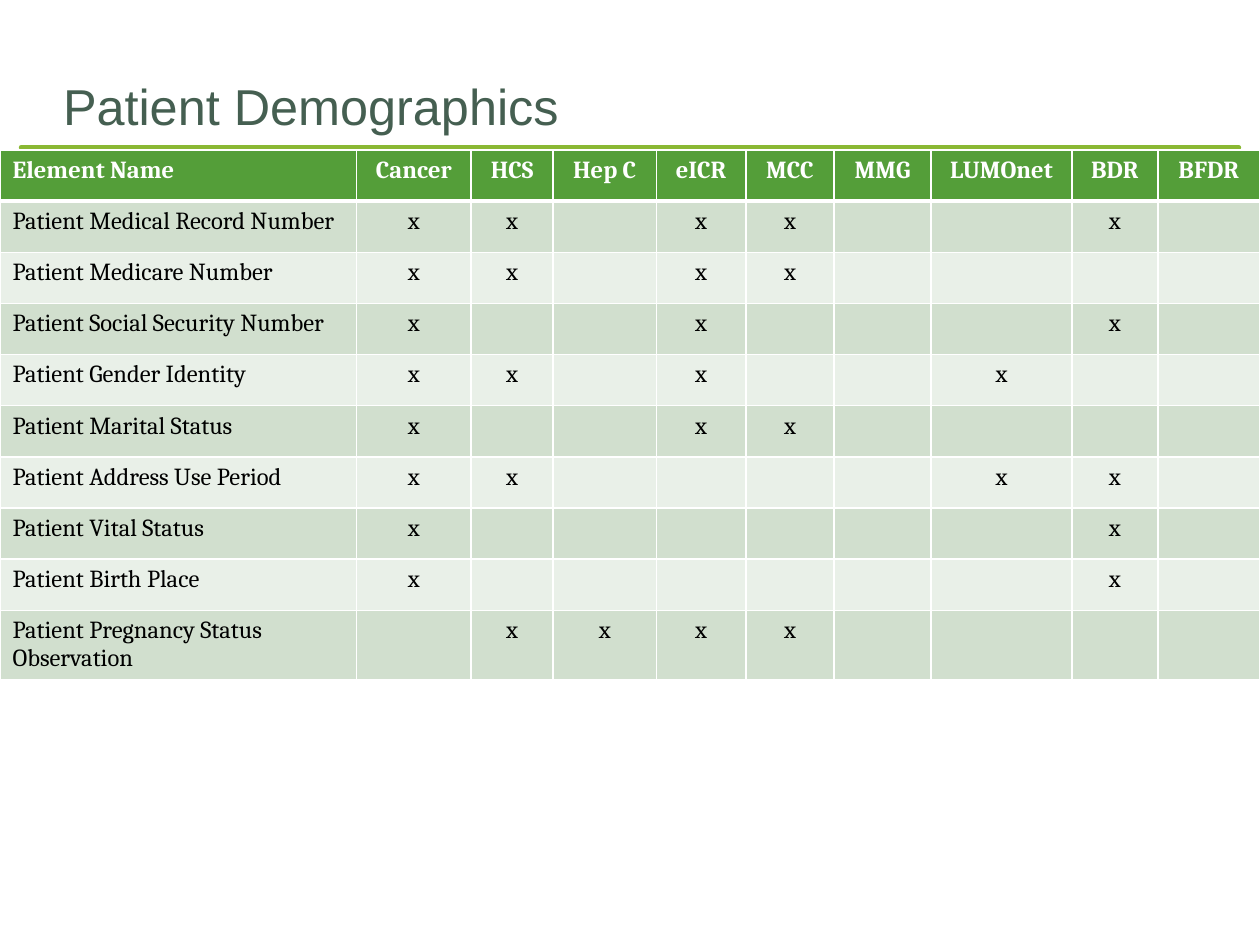
from lxml import etree
from pptx import Presentation
from pptx.dml.color import RGBColor
from pptx.enum.shapes import MSO_CONNECTOR as Conn
from pptx.enum.text import MSO_ANCHOR as Anchor, MSO_AUTO_SIZE as Fit, PP_ALIGN as Align
from pptx.oxml import parse_xml
from pptx.oxml.ns import nsdecls, qn
from pptx.util import Inches, Pt

HEADS = ["Element Name", "Cancer", "HCS", "Hep C", "eICR", "MCC", "MMG",
         "LUMOnet", "BDR", "BFDR"]
WIDTHS = [2.83, 0.91, 0.65, 0.82, 0.71, 0.7, 0.77, 1.12, 0.68, 0.81]
USES = {
    "Patient Medical Record Number": "Cancer, HCS, eICR, MCC, BDR",
    "Patient Medicare Number": "Cancer, HCS, eICR, MCC",
    "Patient Social Security Number": "Cancer, eICR, BDR",
    "Patient Gender Identity": "Cancer, HCS, eICR, LUMOnet",
    "Patient Marital Status": "Cancer, eICR, MCC",
    "Patient Address Use Period": "Cancer, HCS, LUMOnet, BDR",
    "Patient Vital Status": "Cancer, BDR",
    "Patient Birth Place": "Cancer, BDR",
    "Patient Pregnancy Status Observation": "HCS, Hep C, eICR, MCC",
}


def color(hex_):
    return RGBColor.from_string(hex_)


def style(para, font, size, hex_, bold=False, align=Align.LEFT):
    para.alignment = align
    para.font.name, para.font.size, para.font.bold = font, Pt(size), bold
    para.font.color.rgb = color(hex_)


def add_title(slide, text, left, top, width, height):
    title = slide.shapes.title
    title.left, title.top, title.width, title.height = left, top, width, height
    frame = title.text_frame
    frame.text = text
    frame.auto_size, frame.word_wrap = Fit.NONE, True
    frame.vertical_anchor = Anchor.BOTTOM
    frame.margin_left = frame.margin_right = frame.margin_bottom = 0
    frame.margin_top = Inches(0.05)
    style(frame.paragraphs[0], "Arial", 28.8, "455F51")


def add_rule(slide, left, top, width):
    """Draw the round-ended line under the title, with its soft shadow."""
    rule = slide.shapes.add_connector(Conn.STRAIGHT, left, top, left + width, top)
    rule.line.color.rgb = color("8AB833")
    rule.line.width = Pt(3)
    rule.line._get_or_add_ln().set("cap", "rnd")
    rule._element.spPr.append(parse_xml(
        f'<a:effectLst {nsdecls("a")}><a:outerShdw dist="{Pt(3)}" dir="5400000">'
        '<a:srgbClr val="808080"><a:alpha val="40000"/></a:srgbClr>'
        '</a:outerShdw></a:effectLst>'))


def add_edges(cell, base):
    """Give a cell white borders, the lower one base points wide."""
    props = cell._tc.get_or_add_tcPr()
    for i, (side, size) in enumerate(zip("LRTB", (1, 1, 1, base))):
        edge = etree.Element(qn(f"a:ln{side}"), w=str(Pt(size)))
        fill = etree.SubElement(edge, qn("a:solidFill"))
        etree.SubElement(fill, qn("a:srgbClr"), val="FFFFFF")
        props.insert(i, edge)


def add_grid(slide, left, top, width, height):
    marks = [[name] + ["x" if head in uses.split(", ") else "" for head in HEADS[1:]]
             for name, uses in USES.items()]
    rows = [HEADS] + marks
    table = slide.shapes.add_table(len(rows), len(HEADS), left, top, width, height).table
    for col, size in zip(table.columns, WIDTHS):
        col.width = Inches(size)
    for r, row in enumerate(rows):
        head = r == 0
        back = "549E39" if head else ("E9F0E8", "D1DFCE")[r % 2]
        for c, text in enumerate(row):
            cell = table.cell(r, c)
            cell.text = text
            cell.fill.solid()
            cell.fill.fore_color.rgb = color(back)
            add_edges(cell, 3 if head else 1)
            style(cell.text_frame.paragraphs[0], "Cambria", 14,
                  "FFFFFF" if head else "000000", head,
                  Align.CENTER if c else Align.LEFT)


def main():
    deck = Presentation()
    deck.slide_width, deck.slide_height = Inches(10), Inches(7.5)
    slide = deck.slides.add_slide(deck.slide_layouts[5])
    add_rule(slide, Inches(0.17), Inches(1.17), Inches(9.66))
    add_title(slide, "Patient Demographics",
              Inches(0.5), Inches(0.5), Inches(9), Inches(0.58))
    add_grid(slide, Inches(0), Inches(1.19), Inches(10), Inches(4.06))
    deck.save("out.pptx")


if __name__ == "__main__":
    main()
